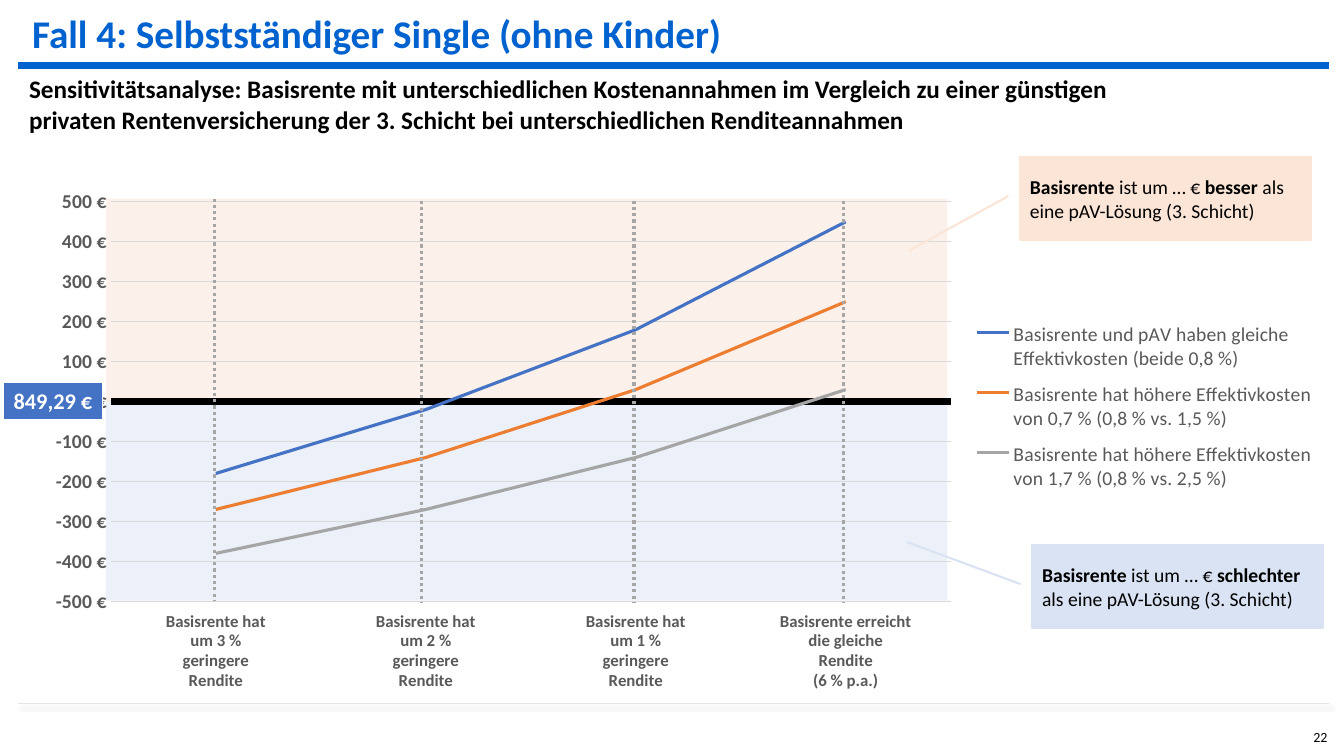
from lxml import etree
from pptx import Presentation
from pptx import util as u
from pptx.chart.data import CategoryChartData
from pptx.dml.color import RGBColor
from pptx.enum import chart as ch, dml, shapes, text
from pptx.oxml import parse_xml
from pptx.oxml.ns import nsdecls, qn

BLUE = RGBColor(0x00, 0x62, 0xCF)
BLACK = RGBColor(0, 0, 0)
WHITE = RGBColor(0xFF, 0xFF, 0xFF)
FOOT_GREY = RGBColor(0xE7, 0xE6, 0xE6)
LABEL_GREY = RGBColor(0x59, 0x59, 0x59)
GRID_GREY = RGBColor(0xD9, 0xD9, 0xD9)
GUIDE_GREY = RGBColor(0xA6, 0xA6, 0xA6)
WORSE = RGBColor(0xDA, 0xE3, 0xF3)
BETTER = RGBColor(0xFB, 0xE5, 0xD6)
EQUAL_COST = RGBColor(0x44, 0x72, 0xC4)
MEDIUM_COST = RGBColor(0xED, 0x7D, 0x31)
HIGH_COST = RGBColor(0xA5, 0xA5, 0xA5)

CATEGORIES = [
    "Basisrente hat\num 3 %\ngeringere\nRendite",
    "Basisrente hat\num 2 %\ngeringere\nRendite",
    "Basisrente hat\num 1 %\ngeringere\nRendite",
    "Basisrente erreicht\ndie gleiche\nRendite\n(6 % p.a.)",
]
SERIES = [
    ("Basisrente und pAV haben gleiche\nEffektivkosten (beide 0,8 %)", (-180, -20, 180, 450), EQUAL_COST),
    ("Basisrente hat höhere Effektivkosten\nvon 0,7 % (0,8 % vs. 1,5 %)", (-270, -140, 30, 250), MEDIUM_COST),
    ("Basisrente hat höhere Effektivkosten\nvon 1,7 % (0,8 % vs. 2,5 %)", (-380, -270, -140, 30), HIGH_COST),
]


class SlideBuilder:
    """Holds the shared style and the slide, and draws each kind of element."""

    font_name = "Calibri"

    def __init__(self, deck):
        self.slide = deck.slides.add_slide(deck.slide_layouts[5])

    def style(self, font, size, color, bold=False):
        font.name, font.size, font.bold = self.font_name, u.Pt(size), bold
        font.color.rgb = color

    def add_runs(self, frame, runs, size, color, anchor=text.MSO_ANCHOR.TOP,
                 align=text.PP_ALIGN.LEFT, wrap=True):
        frame.word_wrap = wrap
        frame.auto_size = text.MSO_AUTO_SIZE.NONE
        frame.vertical_anchor = anchor
        paragraph = frame.paragraphs[0]
        paragraph.alignment = align
        for words, bold in runs:
            run = paragraph.add_run()
            run.text = words
            self.style(run.font, size, color, bold)

    def title(self, box, words):
        heading = self.slide.shapes.title
        heading.left, heading.top, heading.width, heading.height = map(u.Pt, box)
        self.add_runs(heading.text_frame, [(words, True)], 28, BLUE)

    def label(self, box, words, size, bold=False):
        label = self.slide.shapes.add_textbox(*map(u.Pt, box))
        self.add_runs(label.text_frame, [(words, bold)], size, BLACK)

    def shape(self, kind, box, fill, alpha=None, line=None, width=0):
        shape = self.slide.shapes.add_shape(kind, *map(u.Pt, box))
        shape.shadow.inherit = False
        shape.fill.solid()
        shape.fill.fore_color.rgb = fill
        if alpha:
            color = shape.element.spPr.find(".//" + qn("a:srgbClr"))
            etree.SubElement(color, qn("a:alpha"), val=str(alpha * 1000))
        if line is None:
            shape.line.fill.background()
        else:
            shape.line.color.rgb = line
            shape.line.width = u.Pt(width)
        return shape

    def callout(self, box, fill, pointer, verdict):
        callout = self.shape(shapes.MSO_SHAPE.LINE_CALLOUT_1, box, fill, line=fill, width=1.5)
        for index, value in enumerate(pointer):
            callout.adjustments[index] = value
        runs = [("Basisrente", True), (" ist um … € ", False), (verdict, True),
                (" als eine pAV-Lösung (3. Schicht)", False)]
        self.add_runs(callout.text_frame, runs, 14, BLACK, text.MSO_ANCHOR.MIDDLE)

    def line(self, start, end, color, width, dash=None, shadow=False):
        line = self.slide.shapes.add_connector(
            shapes.MSO_CONNECTOR.STRAIGHT, *map(u.Pt, (*start, *end)))
        line.line.color.rgb = color
        line.line.width = u.Pt(width)
        if dash:
            line.line.dash_style = dash
        effects = etree.SubElement(line.element.spPr, qn("a:effectLst"))
        if shadow:
            outer = etree.SubElement(effects, qn("a:outerShdw"), blurRad=str(int(u.Pt(3))),
                                     dist=str(int(u.Pt(3))), dir="2700000")
            tint = etree.SubElement(outer, qn("a:srgbClr"), val=str(BLACK))
            etree.SubElement(tint, qn("a:alpha"), val="40000")

    def layout(self, parent, index, box, inner=False):
        for old in parent.findall(qn("c:layout")):
            parent.remove(old)
        target = '<c:layoutTarget val="inner"/>' if inner else ""
        modes = '<c:xMode val="edge"/><c:yMode val="edge"/>'
        sizes = "".join(f'<c:{key} val="{value}"/>' for key, value in zip("xywh", box))
        parent.insert(index, parse_xml(
            f'<c:layout {nsdecls("c")}><c:manualLayout>{target}{modes}{sizes}'
            "</c:manualLayout></c:layout>"))

    def line_chart(self, box, plot_box, legend_box):
        data = CategoryChartData()
        data.categories = CATEGORIES
        for name, values, _ in SERIES:
            data.add_series(name, values)
        chart = self.slide.shapes.add_chart(
            ch.XL_CHART_TYPE.LINE, *map(u.Pt, box), data).chart
        self.style(chart.font, 10, BLACK)
        chart.has_title = False
        plot = chart.plots[0]
        plot.vary_by_categories = False
        for series, (_, _, color) in zip(plot.series, SERIES):
            series.smooth = False
            series.format.line.color.rgb = color
            series.format.line.width = u.Pt(2.25)
        for axis, size in ((chart.category_axis, 12), (chart.value_axis, 14)):
            axis.major_tick_mark = axis.minor_tick_mark = ch.XL_TICK_MARK.NONE
            self.style(axis.tick_labels.font, size, LABEL_GREY, True)
        scenarios, euros = chart.category_axis, chart.value_axis
        scenarios.tick_label_position = ch.XL_TICK_LABEL_POSITION.LOW
        scenarios.format.line.color.rgb = BLACK
        scenarios.format.line.width = u.Pt(5)
        euros.minimum_scale, euros.maximum_scale, euros.major_unit = -500, 500, 100
        euros.tick_labels.number_format = '#,##0\\ "€"'
        euros.tick_labels.number_format_is_linked = False
        euros.format.line.fill.background()
        euros.major_gridlines.format.line.color.rgb = GRID_GREY
        euros.major_gridlines.format.line.width = u.Pt(0.75)
        chart.has_legend = True
        legend = chart.legend
        legend.position = ch.XL_LEGEND_POSITION.RIGHT
        legend.include_in_layout = False
        self.style(legend.font, 14, LABEL_GREY)
        plot_area = plot_box, chart.element.find(".//" + qn("c:plotArea"))
        self.layout(plot_area[1], 0, plot_area[0], inner=True)
        self.layout(chart.element.find(".//" + qn("c:legend")), 1, legend_box)


def main():
    deck = Presentation()
    deck.slide_width, deck.slide_height = u.Pt(960), u.Pt(540)
    page = SlideBuilder(deck)
    page.title((15.8, 2.9, 929, 41), "Fall 4: Selbstständiger Single (ohne Kinder)")
    page.line((13, 46.8), (949, 46.8), BLUE, 4.5)
    page.line((13, 502.6), (949, 502.6), FOOT_GREY, 1, shadow=True)
    rectangle = shapes.MSO_SHAPE.RECTANGLE
    page.shape(rectangle, (75.6, 285.8, 601.2, 143.3), WORSE, alpha=50)
    page.shape(rectangle, (75.6, 141.8, 601.2, 145.4), BETTER, alpha=50)
    page.line_chart((23.8, 124.6, 923, 391), (0.06, 0.05, 0.65, 0.73),
                    (0.72, 0.25, 0.28, 0.35))
    page.callout((728.6, 112.3, 208, 59), BETTER, (0.47, -0.04, 1.13, -0.38), "besser")
    page.callout((737.3, 389.5, 208, 59), WORSE, (0.47, -0.04, -0.04, -0.43), "schlechter")
    page.label((13.7, 49, 805.7, 51),
               "Sensitivitätsanalyse: Basisrente mit unterschiedlichen Kostenannahmen im Vergleich "
               "zu einer günstigen privaten Rentenversicherung der 3. Schicht bei unterschiedlichen "
               "Renditeannahmen", 18, True)
    for x, top in ((153.4, 141.8), (301, 143.3), (452.9, 143.3), (602.6, 143.3)):
        page.line((x, top), (x, top + 287.3), GUIDE_GREY, 2.25, dml.MSO_LINE.ROUND_DOT)
    page.label((931, 517, 38, 22.3), "22", 10)
    pension = page.shape(rectangle, (2.2, 272.9, 71.3, 26.6), EQUAL_COST, line=WHITE, width=0.75)
    page.add_runs(pension.text_frame, [("849,29 €", True)], 16, WHITE,
                  text.MSO_ANCHOR.MIDDLE, text.PP_ALIGN.CENTER, wrap=False)
    deck.save("out.pptx")


if __name__ == "__main__":
    main()
